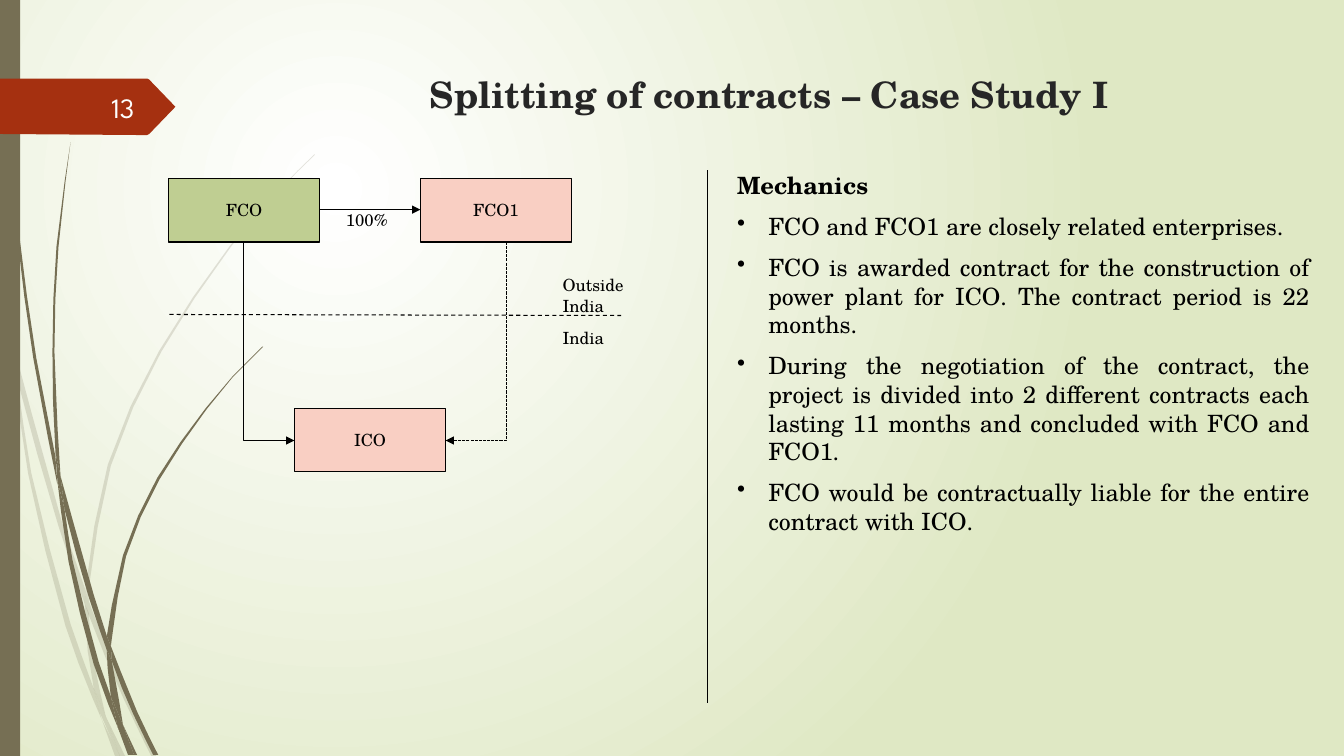
from dataclasses import dataclass

from lxml.etree import SubElement
from pptx import Presentation
from pptx.dml.color import RGBColor
from pptx.enum.dml import MSO_LINE
from pptx.enum.shapes import MSO_CONNECTOR, MSO_SHAPE
from pptx.enum.text import MSO_ANCHOR, PP_ALIGN
from pptx.oxml.ns import qn
from pptx.util import Inches, Pt

WHITE = RGBColor(0xFF, 0xFF, 0xFF)
PALE_GREEN = RGBColor(0xDF, 0xE8, 0xC4)
OLIVE = RGBColor(0x76, 0x6F, 0x54)
RUST = RGBColor(0xA5, 0x30, 0x10)
GREEN = RGBColor(0xBF, 0xCE, 0x92)
PINK = RGBColor(0xF9, 0xCF, 0xC3)
BLACK = RGBColor(0, 0, 0)
CHARCOAL = RGBColor(0x26, 0x26, 0x26)
NUMBER_WHITE = RGBColor(0xFE, 0xFF, 0xFF)
SERIF = "TeX Gyre Schola"
SANS = "League Spartan"
BOX_WIDTH, BOX_HEIGHT = 1.5, 0.63
LONG_SIDE = 0.45
SHARP_COSINE = 0.85

FADED_WISPS = [
    [(0.11, 3.5), (0.09, 3.22), (0, 2.82), (0, 2.99), (0.1, 3.44)],
    [(0.58, 5.22), (0.84, 5.99), (0.85, 5.86), (0.62, 5.2), (0.14, 3.45), (0.17, 3.76)],
    [(0.92, 6.07), (0.88, 5.96), (0.88, 6.1), (1.23, 6.94), (1.5, 7.5), (1.55, 7.5), (1.27, 6.92)],
    [(1.19, 7.5), (1.24, 7.5), (1.05, 7.11)],
    [(0.93, 6.83), (0.7, 6.19), (0.31, 4.69), (0.17, 3.76), (0.11, 3.5), (0.28, 4.7),
     (0.65, 6.21), (0.92, 6.93), (1.01, 7.14), (0.99, 7.07)],
    [(0.84, 5.99), (0.87, 6.46), (0.93, 6.83), (1.05, 7.11), (0.91, 6.46), (0.88, 6.08)],
    [(0.88, 5.84), (1.1, 4.62), (1.6, 3.49), (2.29, 2.45), (2.68, 1.98), (3.12, 1.54),
     (3.12, 1.53), (2.68, 1.97), (2.28, 2.44), (1.58, 3.48), (1.07, 4.61), (0.85, 5.84),
     (0.88, 5.96)],
    [(1.01, 7.14), (1.14, 7.5), (1.19, 7.5)],
    [(0.88, 6.1), (0.88, 5.96), (0.85, 5.86), (0.84, 5.99)],
    [(0.93, 6.83), (0.99, 7.07), (1.19, 7.5), (1.05, 7.11)],
]
SOLID_WISPS = [
    [(0.07, 1.1), (0.17, 2.33), (0.33, 3.55), (0.57, 4.81), (0.55, 4.53), (0.36, 3.55),
     (0.19, 2.32), (0.08, 1.09), (0.04, 0), (0.03, 0)],
    [(0.88, 5.92), (1.06, 6.45), (1.06, 6.31), (0.93, 5.9), (0.6, 4.72), (0.64, 5.05)],
    [(1.1, 6.41), (1.11, 6.56), (1.32, 7.08), (1.52, 7.49), (1.57, 7.49), (1.36, 7.06)],
    [(1.1, 6.91), (0.98, 6.57), (0.72, 5.56), (0.64, 5.05), (0.57, 4.77), (0.68, 5.57),
     (0.93, 6.59), (1.17, 7.22)],
    [(0.6, 4.72), (0.54, 3.49), (0.58, 2.45), (0.7, 1.41), (0.56, 2.45), (0.52, 3.49),
     (0.55, 4.49)],
    [(1.33, 7.49), (1.36, 7.49), (1.22, 7.19)],
    [(0.57, 4.77), (0.64, 5.05), (0.6, 4.72), (0.55, 4.49)],
    [(1.11, 6.33), (1.25, 5.52), (1.58, 4.76), (2.05, 4.06), (2.31, 3.74), (2.61, 3.44),
     (2.6, 3.44), (2.31, 3.73), (2.04, 4.05), (1.56, 4.74), (1.22, 5.51), (1.06, 6.31),
     (1.1, 6.41)],
    [(1.17, 7.22), (1.27, 7.49), (1.31, 7.49)],
    [(1.06, 6.45), (1.1, 6.91), (1.22, 7.19), (1.11, 6.56)],
    [(1.06, 6.45), (1.11, 6.56), (1.1, 6.41), (1.06, 6.31)],
    [(1.1, 6.91), (1.17, 7.22), (1.3, 7.49), (1.33, 7.49), (1.22, 7.19)],
]
PAGE_TAG = [(1.74, 1.06), (1.48, 1.33), (1.46, 1.34), (1.36, 1.34), (0, 1.33), (0, 0.78),
            (1.46, 0.78), (1.48, 0.79)]


@dataclass
class Label:
    at: tuple
    lines: list
    size: int
    font: str = SERIF
    color: RGBColor = BLACK
    bold: bool = False
    align: PP_ALIGN = PP_ALIGN.LEFT
    anchor: MSO_ANCHOR = MSO_ANCHOR.TOP
    margins: tuple = (0, 0)
    space_after: int = 0


@dataclass
class Company:
    name: str
    left: float
    top: float
    fill: RGBColor


@dataclass
class Link:
    start: tuple
    end: tuple
    dash: MSO_LINE = MSO_LINE.SOLID
    arrow: bool = False
    bent: bool = False


LABELS = [
    Label((2.76, 0.67, 9.75, 1.4), ["Splitting of contracts – Case Study I"], 26, color=CHARCOAL,
          bold=True, align=PP_ALIGN.CENTER, margins=(0.1, 0.05)),
    Label((5.58, 2.73, 0.92, 0.51), ["Outside India", "India"], 12, space_after=9),
    Label((3.43, 2.08, 0.47, 0.28), ["100%"], 12, space_after=9),
    Label((0.58, 0.86, 0.85, 0.4), ["13"], 20, SANS, NUMBER_WHITE, align=PP_ALIGN.RIGHT,
          anchor=MSO_ANCHOR.MIDDLE, margins=(0.1, 0.05)),
]
MECHANICS = Label((7.31, 1.69, 5.68, 5.54), [
    "Mechanics",
    "FCO and FCO1 are closely related enterprises.",
    "FCO is awarded contract for the construction of power plant for ICO. "
    "The contract period is 22 months.",
    "During the negotiation of the contract, the project is divided into 2 different contracts "
    "each lasting 11 months and concluded with FCO and FCO1.",
    "FCO would be contractually liable for the entire contract with ICO.",
], 17, space_after=9)
COMPANIES = [Company("FCO", 1.67, 1.77, GREEN), Company("FCO1", 4.17, 1.77, PINK),
             Company("ICO", 2.92, 4.05, PINK)]
LINKS = [
    Link((7.02, 1.69), (7.02, 6.97)),
    Link((1.68, 3.12), (6.16, 3.13), MSO_LINE.DASH),
    Link((3.17, 2.08), (4.17, 2.08), arrow=True),
    Link((2.42, 2.4), (2.92, 4.37), arrow=True, bent=True),
    Link((5.02, 2.4), (4.42, 4.37), MSO_LINE.SQUARE_DOT, True, True),
]


def smooth_outline(anchors: list) -> list:
    points = [complex(x, y) for x, y in anchors]
    following = points[1:] + points[:1]
    tangents = []
    for index, point in enumerate(points):
        before, after = point - points[index - 1], following[index] - point
        cosine = (before.conjugate() * after).real / abs(before) / abs(after)
        chord = before + after
        tangents.append(chord / abs(chord) if cosine > SHARP_COSINE else 0)
    outline = []
    for start, end, leave, arrive in zip(points, following, tangents, tangents[1:] + tangents[:1]):
        outline.append(start)
        length = abs(end - start)
        if length > LONG_SIDE:
            outline.append((start + end) / 2 + (leave - arrive) * length / 8)
    return [(Inches(point.real), Inches(point.imag)) for point in outline]


def paint(shape, color: RGBColor) -> None:
    shape.shadow.inherit = False
    shape.fill.solid()
    shape.fill.fore_color.rgb = color
    shape.line.fill.background()


def draw_outline(shapes, outline: list, color: RGBColor, opacity: int = 100) -> None:
    builder = shapes.build_freeform(*outline[0])
    builder.add_line_segments(outline[1:], close=True)
    shape = builder.convert_to_shape()
    paint(shape, color)
    if opacity < 100:
        fill_color = shape.element.spPr.find(qn("a:solidFill"))[0]
        SubElement(fill_color, qn("a:alpha"), val=str(opacity * 1000))


def write_label(frame, label: Label) -> None:
    frame.word_wrap = True
    frame.vertical_anchor = label.anchor
    frame.margin_left = frame.margin_right = Inches(label.margins[0])
    frame.margin_top = frame.margin_bottom = Inches(label.margins[1])
    for index, line in enumerate(label.lines):
        paragraph = frame.add_paragraph() if index else frame.paragraphs[0]
        paragraph.alignment = label.align
        paragraph.space_after = Pt(label.space_after)
        run = paragraph.add_run()
        run.text = line
        run.font.name, run.font.size, run.font.bold = label.font, Pt(label.size), label.bold
        run.font.color.rgb = label.color


def draw_label(shapes, label: Label):
    box = shapes.add_textbox(*map(Inches, label.at))
    write_label(box.text_frame, label)
    return box.text_frame


def draw_mechanics(shapes) -> None:
    heading, *points = draw_label(shapes, MECHANICS).paragraphs
    heading.runs[0].font.bold = True
    for point in points:
        point.alignment = PP_ALIGN.JUSTIFY
        properties = point._p.get_or_add_pPr()
        properties.set("marL", str(Inches(0.31)))
        properties.set("indent", str(Inches(-0.31)))
        SubElement(properties, qn("a:buChar"), char="•")


def draw_company(shapes, company: Company) -> None:
    at = (company.left, company.top, BOX_WIDTH, BOX_HEIGHT)
    shape = shapes.add_shape(MSO_SHAPE.RECTANGLE, *map(Inches, at))
    paint(shape, company.fill)
    shape.line.color.rgb = BLACK
    shape.line.width = Pt(1)
    write_label(shape.text_frame, Label(at, [company.name], 12, align=PP_ALIGN.CENTER,
                                        anchor=MSO_ANCHOR.MIDDLE, margins=(0.1, 0.05)))


def draw_link(shapes, link: Link) -> None:
    (x1, y1), (x2, y2) = link.start, link.end
    side = 1 if x2 > x1 else -1
    if link.bent:
        middle_x, middle_y = (x1 + x2) / 2, (y1 + y2) / 2
        half_width, half_height = (y2 - y1) / 2, abs(x2 - x1) / 2
        x1, x2 = middle_x + side * half_width, middle_x - side * half_width
        y1, y2 = middle_y - half_height, middle_y + half_height
    kind = MSO_CONNECTOR.ELBOW if link.bent else MSO_CONNECTOR.STRAIGHT
    connector = shapes.add_connector(kind, *map(Inches, (x1, y1, x2, y2)))
    properties = connector._element.spPr
    if link.bent:
        properties.find(qn("a:prstGeom")).set("prst", "bentConnector2")
        properties.find(qn("a:xfrm")).set("rot", str((180 + side * 90) * 60000))
    connector.line.color.rgb = BLACK
    connector.line.width = Pt(0.75)
    connector.line.dash_style = link.dash
    if link.arrow:
        SubElement(properties.find(qn("a:ln")), qn("a:tailEnd"), type="triangle")
    SubElement(properties, qn("a:effectLst"))


def draw_background(slide) -> None:
    fill = slide.background.fill
    fill.gradient()
    for stop, color in zip(fill.gradient_stops, (WHITE, PALE_GREEN)):
        stop.color.rgb = color
    gradient = next(slide.element.iter(qn("a:gradFill")))
    gradient.remove(gradient.find(qn("a:lin")))
    circle = SubElement(gradient, qn("a:path"), path="circle")
    SubElement(circle, qn("a:fillToRect"), l="50000", t="50000", r="100000", b="100000")


def main() -> None:
    presentation = Presentation()
    presentation.slide_width, presentation.slide_height = Inches(13.33), Inches(7.5)
    slide = presentation.slides.add_slide(presentation.slide_layouts[6])
    shapes = slide.shapes
    draw_background(slide)
    for wisps, opacity in ((FADED_WISPS, 20), (SOLID_WISPS, 100)):
        group = shapes.add_group_shape()
        for wisp in wisps:
            draw_outline(group.shapes, smooth_outline(wisp), OLIVE, opacity)
    paint(shapes.add_shape(MSO_SHAPE.RECTANGLE, 0, 0, Inches(0.2), Inches(7.5)), OLIVE)
    draw_outline(shapes, [(Inches(x), Inches(y)) for x, y in PAGE_TAG], RUST)
    for company in COMPANIES:
        draw_company(shapes, company)
    for link in LINKS:
        draw_link(shapes, link)
    for label in LABELS:
        draw_label(shapes, label)
    draw_mechanics(shapes)
    presentation.save("out.pptx")


if __name__ == "__main__":
    main()
